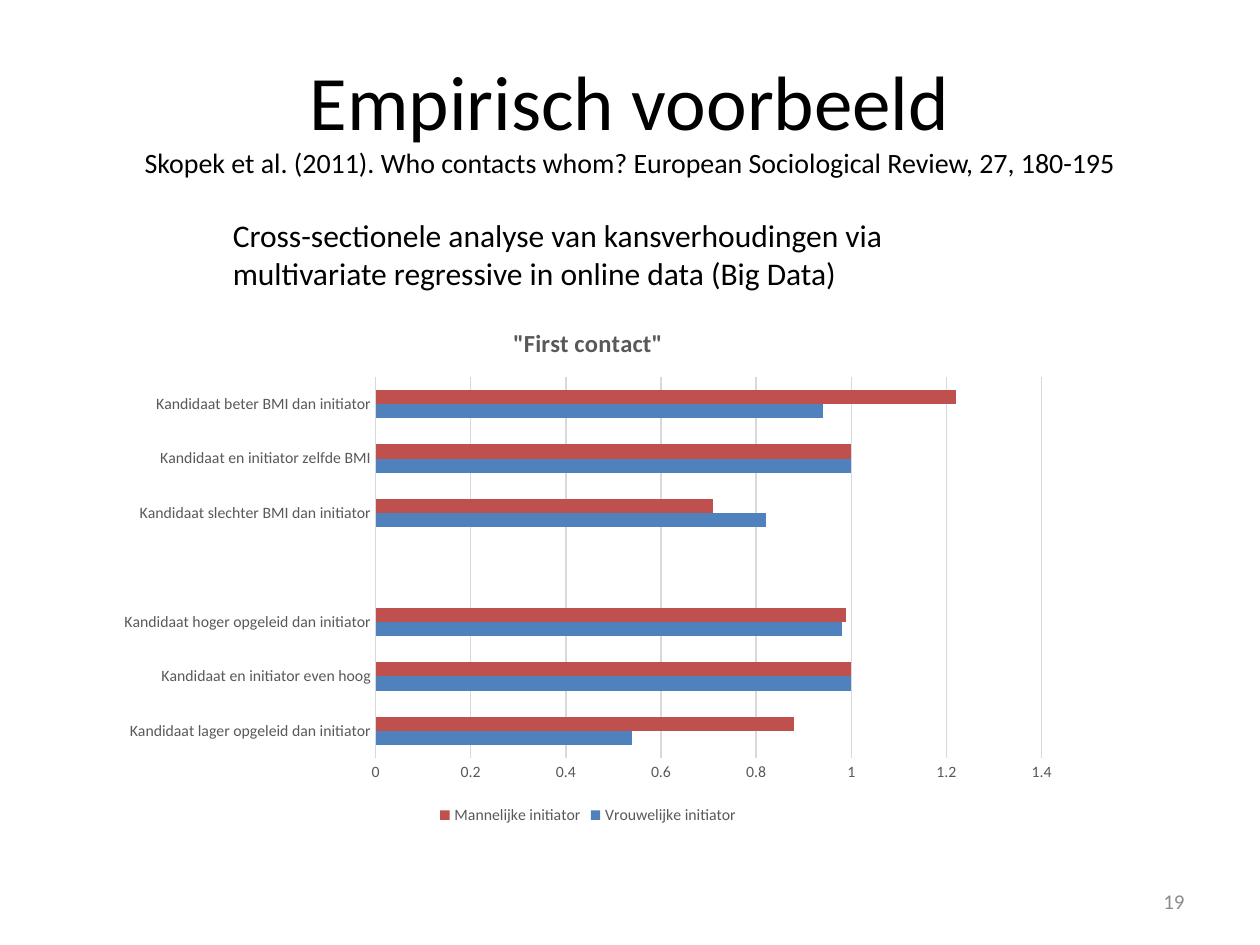
from pptx import Presentation
from pptx.chart.data import CategoryChartData
from pptx.dml.color import RGBColor
from pptx.enum.chart import XL_CHART_TYPE as ChartType, XL_LEGEND_POSITION as LegendPos, XL_TICK_MARK as Tick
from pptx.enum.text import MSO_ANCHOR as Anchor, MSO_AUTO_SIZE as AutoSize, PP_ALIGN as Align
from pptx.util import Pt

FONT = "Calibri"
COLORS = {"text": "000000", "number": "8C8C8C", "label": "595959",
          "grid": "D9D9D9", "female": "4F81BD", "male": "C0504D"}
CATEGORIES = [
    "Kandidaat lager opgeleid dan initiator",
    "Kandidaat en initiator even hoog",
    "Kandidaat hoger opgeleid dan initiator",
    "",
    "Kandidaat slechter BMI dan initiator",
    "Kandidaat en initiator zelfde BMI",
    "Kandidaat beter BMI dan initiator",
]
SERIES = [
    ("Vrouwelijke initiator", "female", (0.54, 1, 0.98, None, 0.82, 1, 0.94)),
    ("Mannelijke initiator", "male", (0.88, 1, 0.99, None, 0.71, 1, 1.22)),
]


def rgb(name):
    return RGBColor.from_string(COLORS[name])


def format_font(font, size, color="text", bold=False):
    for attribute, value in {"name": FONT, "size": Pt(size), "bold": bold}.items():
        setattr(font, attribute, value)
    font.color.rgb = rgb(color)


def add_run(paragraph, text, size, color="text"):
    run = paragraph.add_run()
    run.text = text
    format_font(run.font, size, color)


def set_title(slide, heading, citation):
    title = slide.shapes.title
    box = {"left": 36, "top": 21.6, "width": 648, "height": 90}
    for side, value in box.items():
        setattr(title, side, Pt(value))
    title.text_frame.vertical_anchor = Anchor.MIDDLE
    paragraph = title.text_frame.paragraphs[0]
    paragraph.alignment = Align.CENTER
    add_run(paragraph, heading, 44)
    paragraph.add_line_break()
    add_run(paragraph, citation, 16)


def add_text(slide, box, text, size, color="text", **frame_format):
    frame = slide.shapes.add_textbox(*map(Pt, box)).text_frame
    align = frame_format.pop("align", Align.LEFT)
    for attribute, value in {"word_wrap": True, **frame_format}.items():
        setattr(frame, attribute, value)
    frame.paragraphs[0].alignment = align
    add_run(frame.paragraphs[0], text, size, color)


def format_axes(chart):
    for axis in (chart.category_axis, chart.value_axis):
        axis.major_tick_mark = axis.minor_tick_mark = Tick.NONE
        format_font(axis.tick_labels.font, 9, "label")
    chart.value_axis.format.line.fill.background()
    chart.value_axis.has_major_gridlines = True
    gridlines = chart.value_axis.major_gridlines
    for line in (chart.category_axis.format.line, gridlines.format.line):
        line.color.rgb = rgb("grid")
        line.width = Pt(0.75)


def add_bar_chart(slide, box, title):
    data = CategoryChartData()
    data.categories = CATEGORIES
    for name, _, values in SERIES:
        data.add_series(name, values)
    chart = slide.shapes.add_chart(ChartType.BAR_CLUSTERED, *map(Pt, box), data).chart
    format_font(chart.font, 10)

    # Title and legend
    chart.has_title = True
    title_paragraph = chart.chart_title.text_frame.paragraphs[0]
    title_run = title_paragraph.add_run()
    title_run.text = title
    format_font(title_run.font, 14, "label", bold=True)
    chart.chart_title.include_in_layout = False
    chart.has_legend = True
    chart.legend.position = LegendPos.BOTTOM
    chart.legend.include_in_layout = False
    format_font(chart.legend.font, 9, "label")

    # Axes and bars
    format_axes(chart)
    plot = chart.plots[0]
    plot.gap_width = 182
    plot.vary_by_categories = False
    for series, (_, color, _) in zip(plot.series, SERIES):
        series.invert_if_negative = False
        series.format.fill.solid()
        series.format.fill.fore_color.rgb = rgb(color)


def main():
    prs = Presentation()
    prs.slide_width, prs.slide_height = Pt(720), Pt(540)
    slide = prs.slides.add_slide(prs.slide_layouts[5])

    set_title(slide, "Empirisch voorbeeld",
              "Skopek et al. (2011). Who contacts whom? European Sociological Review, 27, 180-195")
    # Slide number
    add_text(slide, (516, 500.5, 168, 28.75), "19", 12, "number",
             align=Align.RIGHT, vertical_anchor=Anchor.MIDDLE)
    add_bar_chart(slide, (60, 174, 552, 300), '"First contact"')
    # Method
    add_text(slide, (126, 120, 468, 51),
             "Cross-sectionele analyse van kansverhoudingen via "
             "multivariate regressive in online data (Big Data)",
             18, auto_size=AutoSize.SHAPE_TO_FIT_TEXT)
    prs.save("out.pptx")


if __name__ == "__main__":
    main()
